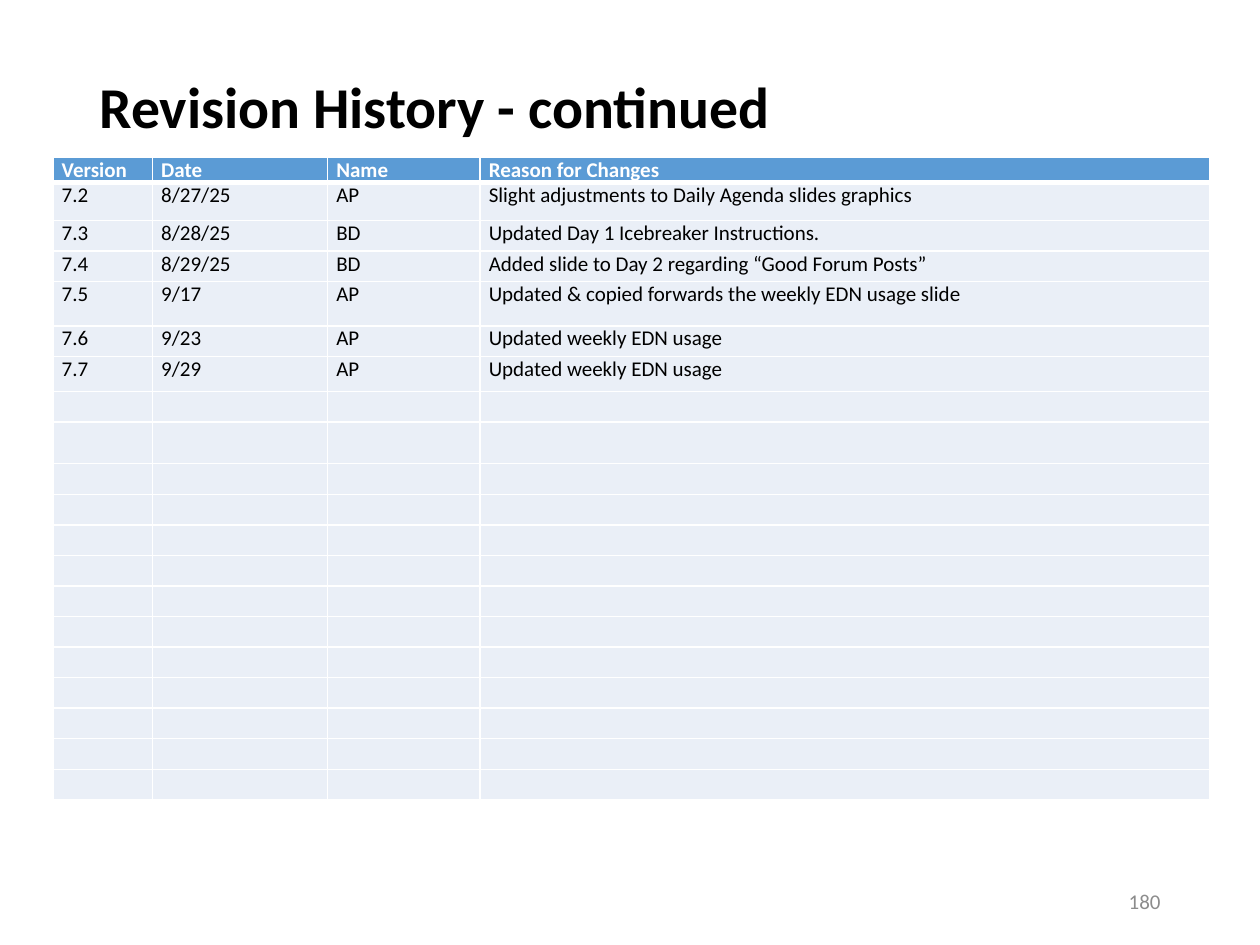
"""Build the revision history slide."""
import pptx
import pptx.dml.color
import pptx.enum.text
import pptx.oxml
import pptx.oxml.ns
import pptx.util
from pptx.util import Inches

FONT = "Calibri"
COLORS = {
    "header": "5B9BD5",
    "body": "EAEFF7",
    "white": "FFFFFF",
    "black": "000000",
    "gray": "8C8C8C",
}
COLUMN_WIDTHS = [0.79, 1.39, 1.21, 5.79]
ROW_COUNT = 20
SPECIAL_ROW_HEIGHTS = {0: 0.2, 1: 0.3, 4: 0.35, 6: 0.28, 8: 0.33}
REVISIONS = [
    ("Version", "Date", "Name", "Reason for Changes"),
    ("7.2", "8/27/25", "AP", "Slight adjustments to Daily Agenda slides graphics"),
    ("7.3", "8/28/25", "BD", "Updated Day 1 Icebreaker Instructions."),
    ("7.4", "8/29/25", "BD", "Added slide to Day 2 regarding “Good Forum Posts”"),
    ("7.5", "9/17", "AP", "Updated & copied forwards the weekly EDN usage slide"),
    ("7.6", "9/23", "AP", "Updated weekly EDN usage"),
    ("7.7", "9/29", "AP", "Updated weekly EDN usage"),
]


def rgb(name):
    """Return the named colour."""
    return pptx.dml.color.RGBColor.from_string(COLORS[name])


def format_runs(paragraph, size, color, bold=False):
    """Style every run of a paragraph."""
    for run in paragraph.runs:
        run.font.name = FONT
        run.font.size = pptx.util.Pt(size)
        run.font.bold = bold
        run.font.color.rgb = rgb(color)


def add_text(slide, box, text, size, color, bold=False):
    """Add a wrapped, vertically centred text box and return its shape."""
    shape = slide.shapes.add_textbox(*map(Inches, box))
    text_frame = shape.text_frame
    text_frame.word_wrap = True
    text_frame.vertical_anchor = pptx.enum.text.MSO_ANCHOR.MIDDLE
    text_frame.text = text
    format_runs(text_frame.paragraphs[0], size, color, bold)
    return shape


def add_title(slide, box):
    """Add the title, raised within its box by a deep bottom inset."""
    shape = add_text(slide, box, "Revision History - continued", 33, "black", True)
    shape.text_frame.margin_bottom = Inches(0.55)
    shape.text_frame.paragraphs[0].line_spacing = 0.9


def set_borders(cell, top, bottom):
    """Draw white cell borders with the given top and bottom widths in points."""
    properties = cell._tc.get_or_add_tcPr()
    for side, points in (("L", 1), ("R", 1), ("T", top), ("B", bottom)):
        properties.append(pptx.oxml.parse_xml(
            f'<a:ln{side} {pptx.oxml.ns.nsdecls("a")} w="{pptx.util.Pt(points)}">'
            f'<a:solidFill><a:srgbClr val="{COLORS["white"]}"/></a:solidFill>'
            f'</a:ln{side}>'))


def fill_cell(cell, text, row_index):
    """Set the text, borders and fill of one cell."""
    header = row_index == 0
    set_borders(cell, 3 if row_index == 1 else 1, 3 if header else 1)
    cell.margin_left = cell.margin_right = Inches(0.07)
    cell.margin_top = cell.margin_bottom = 0
    cell.fill.solid()
    cell.fill.fore_color.rgb = rgb("header" if header else "body")
    paragraph = cell.text_frame.paragraphs[0]
    if text:
        paragraph.text = text
        format_runs(paragraph, 12, "white" if header else "black", header)
    else:
        paragraph._p.get_or_add_endParaRPr().set("sz", "1200")


def add_revision_table(slide, box):
    """Add the revision table, sharing the spare height among ordinary rows."""
    table = slide.shapes.add_table(
        ROW_COUNT, len(COLUMN_WIDTHS), *map(Inches, box)).table
    for column, width in zip(table.columns, COLUMN_WIDTHS):
        column.width = Inches(width)
    spare_height = box[3] - sum(SPECIAL_ROW_HEIGHTS.values())
    row_height = spare_height / (ROW_COUNT - len(SPECIAL_ROW_HEIGHTS))
    for row_index, row in enumerate(table.rows):
        row.height = Inches(SPECIAL_ROW_HEIGHTS.get(row_index, row_height))
        has_text = row_index < len(REVISIONS)
        texts = REVISIONS[row_index] if has_text else [""] * len(COLUMN_WIDTHS)
        for cell, text in zip(row.cells, texts):
            fill_cell(cell, text, row_index)


def add_slide_number(slide, box):
    """Add the right-aligned slide number."""
    shape = add_text(slide, box, "180", 12, "gray")
    shape.text_frame.paragraphs[0].alignment = pptx.enum.text.PP_ALIGN.RIGHT


def main():
    """Build and save the presentation."""
    presentation = pptx.Presentation()
    presentation.slide_width = Inches(10)
    presentation.slide_height = Inches(7.5)
    slide = presentation.slides.add_slide(presentation.slide_layouts[6])
    add_title(slide, (0.69, 0.4, 8.62, 1.45))
    add_revision_table(slide, (0.42, 1.25, 9.17, 5.1))
    add_slide_number(slide, (7.06, 6.95, 2.25, 0.4))
    presentation.save("out.pptx")


if __name__ == "__main__":
    main()
